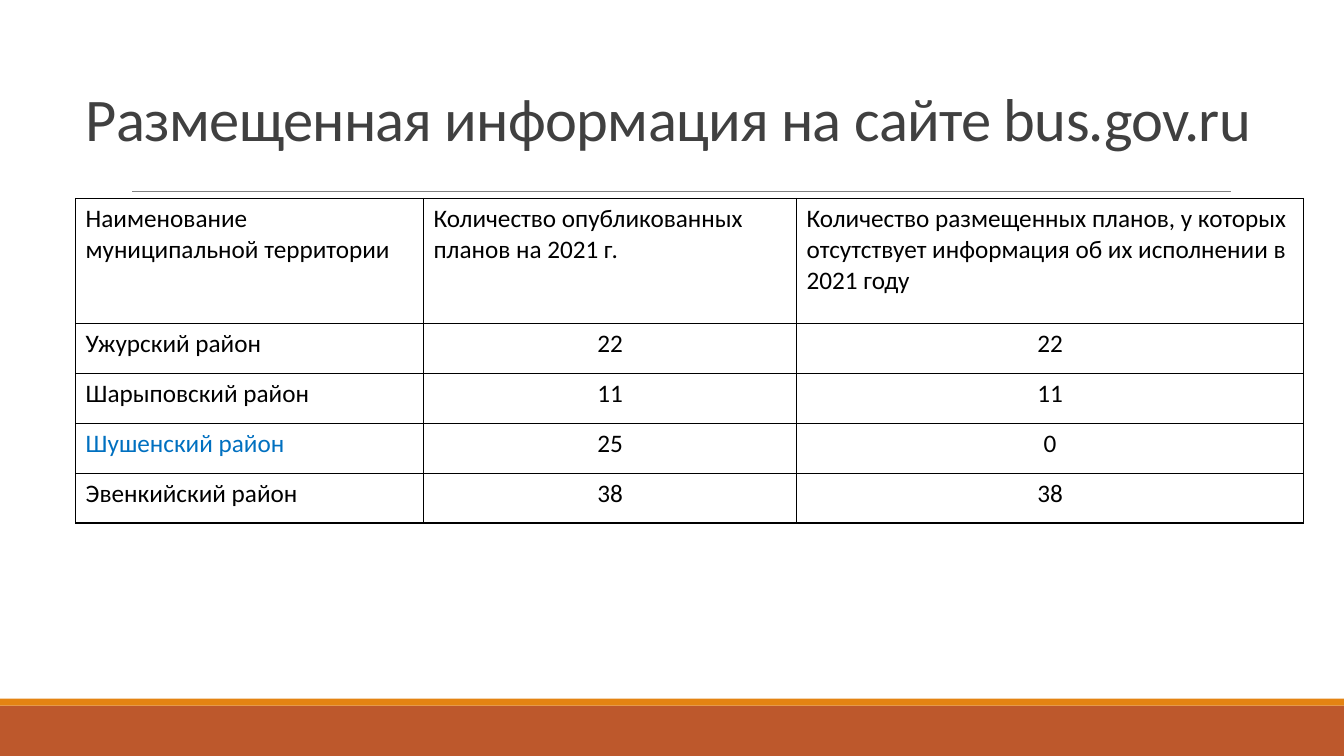
from dataclasses import dataclass

from lxml.etree import SubElement
from pptx import Presentation
from pptx.dml.color import RGBColor
from pptx.enum.shapes import MSO_CONNECTOR as Connector, MSO_SHAPE as Preset
from pptx.enum.text import MSO_ANCHOR as Anchor, MSO_AUTO_SIZE as AutoSize, PP_ALIGN as Align
from pptx.oxml.ns import qn
from pptx.util import Inches, Pt


@dataclass(frozen=True)
class Theme:
    """Colours, font and type sizes of the slide."""
    font: str = "Calibri"
    title_size: float = 43.2
    body_size: float = 18
    title: str = "404040"
    ink: str = "000000"
    highlight: str = "0070C0"
    paper: str = "FFFFFF"
    rule: str = "808080"
    band: str = "BD582C"
    stripe: str = "E48312"


def write(frame, text, *, font, size, color, align=Align.LEFT, line_spacing=None, tracking=None):
    """Fill a text frame with one formatted paragraph."""
    paragraph = frame.paragraphs[0]
    paragraph.alignment = align
    if line_spacing:
        paragraph.line_spacing = line_spacing
    run = paragraph.add_run()
    run.text = text
    run.font.name = font
    run.font.size = Pt(size)
    run.font.bold = False
    run.font.color.rgb = RGBColor.from_string(color)
    if tracking:
        run.font._element.set("spc", str(round(tracking * 100)))


class Deck:
    """Draws on one slide over a grid of 100 columns by 100 rows."""

    def __init__(self, theme, width, height):
        """Open a title-only slide of the given size in inches."""
        self.theme = theme
        self.show = Presentation()
        self.show.slide_width, self.show.slide_height = Inches(width), Inches(height)
        self.slide = self.show.slides.add_slide(self.show.slide_layouts[5])

    def cols(self, count):
        """Turn grid columns into a length."""
        return round(self.show.slide_width * count / 100)

    def rows(self, count):
        """Turn grid rows into a length."""
        return round(self.show.slide_height * count / 100)

    def box(self, left, top, width, height):
        """Turn grid units into a position and size."""
        return self.cols(left), self.rows(top), self.cols(width), self.rows(height)

    def bar(self, top, height, color):
        """Draw a plain bar across the whole slide."""
        bar = self.slide.shapes.add_shape(Preset.RECTANGLE, *self.box(0, top, 100, height))
        bar.shadow.inherit = False
        bar.fill.solid()
        bar.fill.fore_color.rgb = RGBColor.from_string(color)
        bar.line.fill.background()

    def rule(self, start, end, row):
        """Draw a thin horizontal line."""
        y = self.rows(row)
        rule = self.slide.shapes.add_connector(
            Connector.STRAIGHT, self.cols(start), y, self.cols(end), y)
        rule.line.color.rgb = RGBColor.from_string(self.theme.rule)
        rule.line.width = Pt(0.5)
        SubElement(rule._element.spPr, qn("a:effectLst"))

    def title(self, text, *place):
        """Place and fill the title."""
        heading = self.slide.shapes.title
        heading.left, heading.top, heading.width, heading.height = self.box(*place)
        frame = heading.text_frame
        frame.word_wrap = True
        frame.auto_size = AutoSize.NONE
        frame.vertical_anchor = Anchor.BOTTOM
        write(frame, text, font=self.theme.font, size=self.theme.title_size,
              color=self.theme.title, line_spacing=0.85, tracking=-0.5)

    def border(self, cell):
        """Outline all four sides of a cell."""
        properties = cell._tc.get_or_add_tcPr()
        for side in ("a:lnL", "a:lnR", "a:lnT", "a:lnB"):
            edge = SubElement(properties, qn(side), w=str(Pt(1)))
            fill = SubElement(edge, qn("a:solidFill"))
            SubElement(fill, qn("a:srgbClr"), val=self.theme.ink)

    def table(self, records, left, top, widths, heights, highlighted):
        """Draw a bordered table with centred figures."""
        place = self.box(left, top, sum(widths), sum(heights))
        table = self.slide.shapes.add_table(len(records), len(widths), *place).table
        table.first_row = table.horz_banding = False
        for column, width in zip(table.columns, widths):
            column.width = self.cols(width)
        for row, height, record in zip(table.rows, heights, records):
            row.height = self.rows(height)
            for cell, value in zip(row.cells, record):
                self.border(cell)
                cell.fill.solid()
                cell.fill.fore_color.rgb = RGBColor.from_string(self.theme.paper)
                write(cell.text_frame, str(value), font=self.theme.font,
                      size=self.theme.body_size,
                      color=self.theme.highlight if value == highlighted else self.theme.ink,
                      align=Align.CENTER if isinstance(value, int) else Align.LEFT)


def main():
    """Build and save the slide."""
    theme = Theme()
    deck = Deck(theme, 13.33, 7.5)
    margin = 5.63
    plans = [
        ("Наименование муниципальной территории",
         "Количество опубликованных планов на 2021 г.",
         "Количество размещенных планов, у которых отсутствует информация "
         "об их исполнении в 2021 году"),
        ("Ужурский район", 22, 22),
        ("Шарыповский район", 11, 11),
        ("Шушенский район", 25, 0),
        ("Эвенкийский район", 38, 38),
    ]
    deck.bar(93.33, 6.67, theme.band)
    deck.bar(92.4, 0.93, theme.stripe)
    deck.rule(9.83, 91.6, 25.33)
    deck.title("Размещенная информация на сайте bus.gov.ru", margin, 4.13, 89.42, 16.93)
    deck.table(plans, margin, 26.27, widths=(25.88, 27.76, 37.73),
               heights=[16.53] + [6.6] * (len(plans) - 1), highlighted="Шушенский район")
    deck.show.save("out.pptx")


if __name__ == "__main__":
    main()
